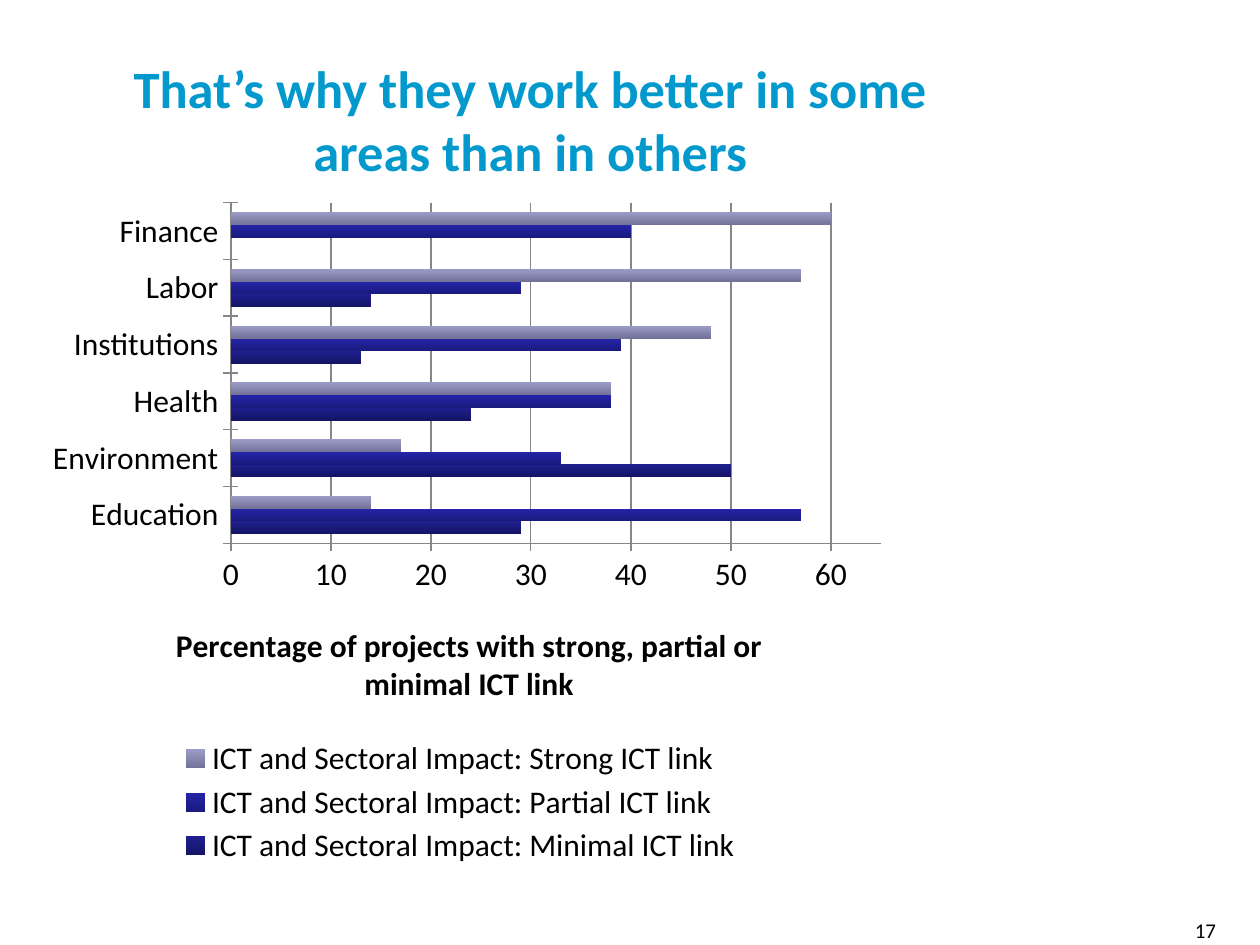
from dataclasses import dataclass

import pptx
import pptx.chart.data
import pptx.dml.color
import pptx.enum.chart
import pptx.enum.text
import pptx.oxml
import pptx.oxml.ns
import pptx.util

WIDTH, HEIGHT = 10, 7.5


@dataclass(frozen=True)
class Theme:
    font: str = "Calibri"
    title: str = "0399CD"
    text: str = "000000"
    line: str = "868686"
    title_size: int = 30
    chart_size: int = 18
    number_size: int = 12


@dataclass(frozen=True)
class Area:
    """A rectangle in shares of whatever contains it."""
    left: float
    top: float
    width: float
    height: float

    def on_slide(self) -> list:
        return [pptx.util.Inches(share * side) for share, side in (
            (self.left, WIDTH), (self.top, HEIGHT),
            (self.width, WIDTH), (self.height, HEIGHT))]


@dataclass(frozen=True)
class Link:
    name: str
    values: tuple
    top_color: str
    bottom_color: str


THEME = Theme()
ALIGN = pptx.enum.text.PP_ALIGN
ANCHOR = pptx.enum.text.MSO_ANCHOR
SECTORS = ("Education", "Environment", "Health", "Institutions", "Labor", "Finance")
LINKS = (
    Link("Minimal", (29, 50, 24, 13, 14, 0), "20208F", "141466"),
    Link("Partial", (57, 33, 38, 39, 29, 40), "2424A8", "1A1A7E"),
    Link("Strong", (14, 17, 38, 48, 57, 60), "9C9CC8", "737399"),
)


def rgb(code: str) -> pptx.dml.color.RGBColor:
    return pptx.dml.color.RGBColor.from_string(code)


def style_font(font, size: int, color: str, bold: bool = False) -> None:
    font.name, font.size, font.bold = THEME.font, pptx.util.Pt(size), bold
    font.color.rgb = rgb(color)


def add_text(page, area: Area, text: str, size: int, color: str,
             align, anchor, bold: bool = False) -> None:
    frame = page.shapes.add_textbox(*area.on_slide()).text_frame
    frame.word_wrap = True
    frame.vertical_anchor = anchor
    para = frame.paragraphs[0]
    para.text, para.alignment = text, align
    style_font(para.font, size, color, bold)


def place(element, area: Area, sized: bool = True, inner: bool = False) -> None:
    """Give a chart part a fixed place within the chart."""
    parts = ['<c:layoutTarget val="inner"/>'] if inner else []
    parts += ['<c:xMode val="edge"/>', '<c:yMode val="edge"/>',
              f'<c:x val="{area.left}"/>', f'<c:y val="{area.top}"/>']
    if sized:
        parts += [f'<c:w val="{area.width}"/>', f'<c:h val="{area.height}"/>']
    layout = pptx.oxml.parse_xml(
        f'<c:layout {pptx.oxml.ns.nsdecls("c")}><c:manualLayout>'
        f'{"".join(parts)}</c:manualLayout></c:layout>')
    for old in element.findall(pptx.oxml.ns.qn("c:layout")):
        element.remove(old)
    # The layout follows the title text or legend position, and opens the plot area
    before = [child for child in element
              if child.tag in (pptx.oxml.ns.qn("c:tx"), pptx.oxml.ns.qn("c:legendPos"))]
    if before:
        before[-1].addnext(layout)
    else:
        element.insert(0, layout)


def style_axis(axis) -> None:
    axis.major_tick_mark = pptx.enum.chart.XL_TICK_MARK.CROSS
    axis.minor_tick_mark = pptx.enum.chart.XL_TICK_MARK.NONE
    axis.format.line.color.rgb = rgb(THEME.line)
    style_font(axis.tick_labels.font, THEME.chart_size, THEME.text)


def add_link_chart(page, area: Area) -> None:
    data = pptx.chart.data.CategoryChartData()
    data.categories = SECTORS
    for link in LINKS:
        data.add_series(f"ICT and Sectoral Impact: {link.name} ICT link", link.values)
    chart = page.shapes.add_chart(
        pptx.enum.chart.XL_CHART_TYPE.BAR_CLUSTERED, *area.on_slide(), data).chart
    style_font(chart.font, THEME.chart_size, THEME.text)
    chart.has_title = False

    # Bars, shaded from top to bottom
    plot = chart.plots[0]
    plot.vary_by_categories = False
    plot.gap_width, plot.overlap = 150, 0
    for series, link in zip(plot.series, LINKS):
        series.invert_if_negative = False
        fill = series.format.fill
        fill.gradient()
        fill.gradient_angle = 270
        for stop, color in zip(fill.gradient_stops, (link.top_color, link.bottom_color)):
            stop.color.rgb = rgb(color)

    # Axes
    style_axis(chart.category_axis)
    axis = chart.value_axis
    style_axis(axis)
    axis.minimum_scale, axis.maximum_scale, axis.major_unit = 0, 65, 10
    axis.has_major_gridlines = True
    axis.major_gridlines.format.line.color.rgb = rgb(THEME.line)
    axis.tick_labels.number_format = "General"
    axis.tick_labels.number_format_is_linked = False
    para = axis.axis_title.text_frame.paragraphs[0]
    para.text = "Percentage of projects with strong, partial or minimal ICT link"
    style_font(para.font, THEME.chart_size, THEME.text, bold=True)

    # Legend and fixed places
    chart.has_legend = True
    legend = chart.legend
    legend.position = pptx.enum.chart.XL_LEGEND_POSITION.BOTTOM
    legend.include_in_layout = False
    style_font(legend.font, THEME.chart_size, THEME.text)
    plot_area = chart.element.find(".//" + pptx.oxml.ns.qn("c:plotArea"))
    title = plot_area.find(".//" + pptx.oxml.ns.qn("c:title"))
    place(plot_area, Area(0.23, 0.02, 0.75, 0.5), inner=True)
    place(title, Area(0.16, 0.63, 0, 0), sized=False)
    place(legend.element if hasattr(legend, "element") else
          chart.element.find(".//" + pptx.oxml.ns.qn("c:legend")),
          Area(0.17, 0.8, 0.65, 0.2))


def main() -> None:
    deck = pptx.Presentation()
    deck.slide_width, deck.slide_height = pptx.util.Inches(WIDTH), pptx.util.Inches(HEIGHT)
    page = deck.slides.add_slide(deck.slide_layouts[6])

    # Page number, chart and heading
    add_text(page, Area(0.717, 0.964, 0.258, 0.069), "17", THEME.number_size,
             THEME.text, ALIGN.RIGHT, ANCHOR.TOP)
    add_link_chart(page, Area(0.025, 0.2, 0.688, 0.721))
    add_text(page, Area(0.05, 0.044, 0.742, 0.163),
             "That’s why they work better in some areas than in others",
             THEME.title_size, THEME.title, ALIGN.CENTER, ANCHOR.MIDDLE, bold=True)
    deck.save("out.pptx")


if __name__ == "__main__":
    main()
